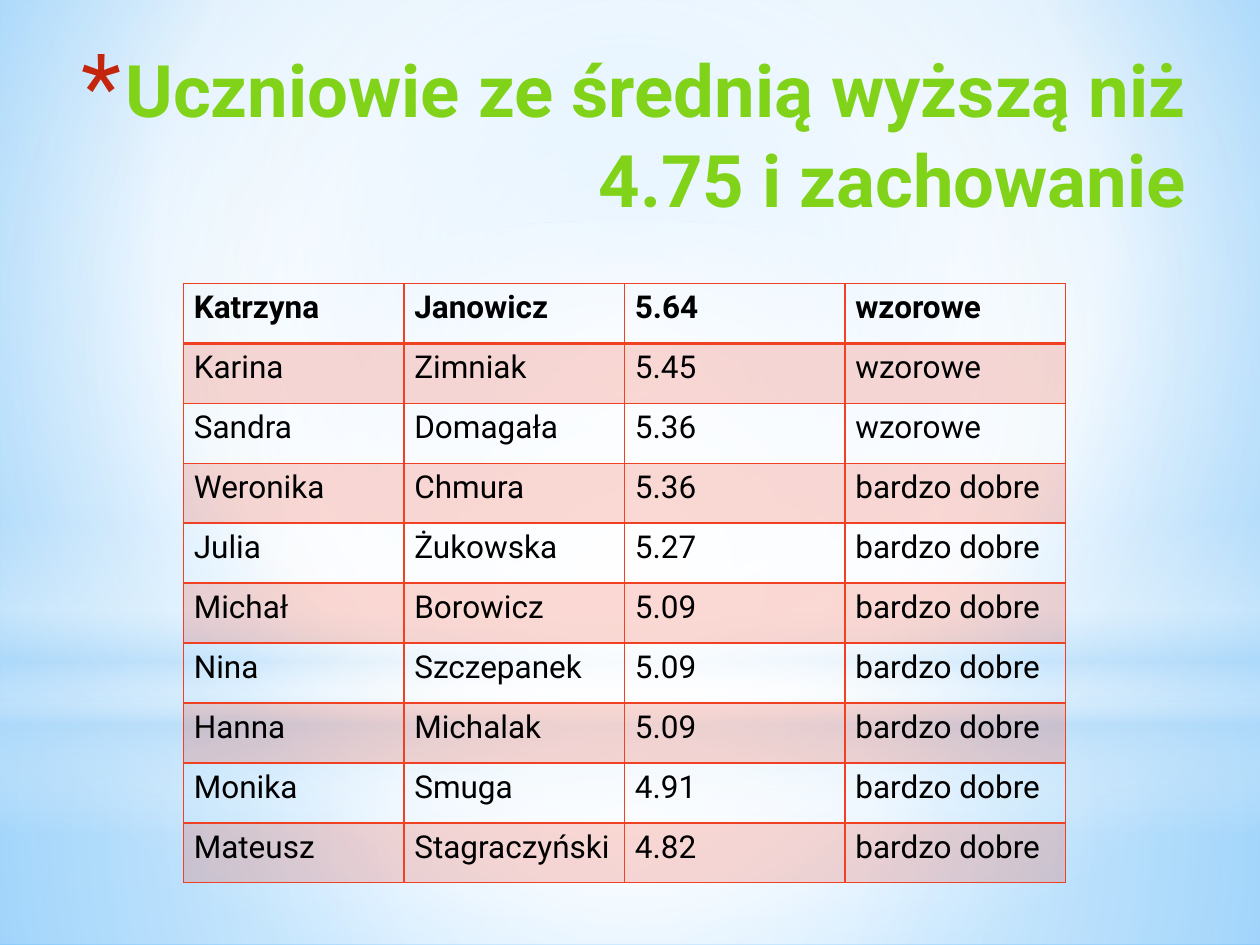
from lxml.etree import SubElement
from pptx import Presentation
from pptx.dml.color import RGBColor
from pptx.enum.shapes import MSO_SHAPE
from pptx.enum.text import PP_ALIGN
from pptx.oxml.ns import qn
from pptx.util import Pt


def hue(code):
    return RGBColor.from_string(code)


def blend(fill, root, stops, focus=None):
    """Fill with (position, colour, opacity) stops; radial if focus is given."""
    fill.gradient()
    grad = root.find(".//" + qn("a:gradFill"))
    for old in list(grad):
        grad.remove(old)
    grad.set("rotWithShape", "1")
    group = SubElement(grad, qn("a:gsLst"))
    for pos, code, alpha in stops:
        stop = SubElement(group, qn("a:gs"), pos=str(pos * 1000))
        tone = SubElement(stop, qn("a:srgbClr"), val=str(hue(code)))
        if alpha < 100:
            SubElement(tone, qn("a:alpha"), val=str(alpha * 1000))
    if focus:
        ring = SubElement(grad, qn("a:path"), path="circle")
        sides = {side: str(part * 1000) for side, part in zip("ltrb", focus)}
        SubElement(ring, qn("a:fillToRect"), **sides)
    else:
        SubElement(grad, qn("a:lin"), ang="5400000", scaled="0")


deck = Presentation()
deck.slide_width, deck.slide_height = Pt(720), Pt(540)
slide = deck.slides.add_slide(deck.slide_layouts[6])

# Background
blend(slide.background.fill, slide.element,
      [(0, "9ED5FF", 100), (60, "FFFFFF", 100), (100, "5BB9FF", 100)],
      (20, 10, 20, 60))

# Soft light layers: shape, top, height, stops, focus
mid = (50, 50, 50, 50)
layers = [
    (MSO_SHAPE.RECTANGLE, 402, 138,
     [(0, "FFFFFF", 91), (37, "FFFFFF", 76), (100, "B4DCFA", 79)], mid),
    (MSO_SHAPE.RECTANGLE, 0, 402,
     [(0, "FFFFFF", 89), (48, "FFFFFF", 62), (100, "B4DCFA", 79)], mid),
    (MSO_SHAPE.RECTANGLE, 296.6, 180,
     [(0, "FFFFFF", 0), (29, "FFFFFF", 30), (45, "B4DCFA", 40),
      (55, "FFFFFF", 26), (65, "B4DCFA", 60), (100, "FFFFFF", 0)], None),
    (MSO_SHAPE.OVAL, 126, 402, [(0, "FFFFFF", 100), (56, "FFFFFF", 0)], mid),
]
for kind, top, height, stops, focus in layers:
    glow = slide.shapes.add_shape(kind, 0, Pt(top), Pt(720), Pt(height))
    glow.shadow.inherit = False
    glow.line.fill.background()
    blend(glow.fill, glow.element, stops, focus)

# Title with a red asterisk bullet
title = slide.shapes.add_textbox(Pt(36.7), Pt(20.9), Pt(648), Pt(90))
title.text_frame.word_wrap = True
para = title.text_frame.paragraphs[0]
para.alignment = PP_ALIGN.RIGHT
para.line_spacing = 1.03
run = para.add_run()
run.text = "Uczniowie ze średnią wyższą niż 4.75 i zachowanie"
for name, value in {"name": "Roboto", "size": Pt(41.4), "bold": True}.items():
    setattr(run.font, name, value)
run.font.color.rgb = hue("81D31A")
props = para._p.get_or_add_pPr()
props.set("marL", str(Pt(25.2)))
props.set("indent", str(Pt(-25.2)))
tint = SubElement(props, qn("a:buClr"))
SubElement(tint, qn("a:srgbClr"), val="C3260C")
SubElement(props, qn("a:buSzPct"), val="128000")
SubElement(props, qn("a:buFont"), typeface="Roboto")
SubElement(props, qn("a:buChar"), char="*")

# Table of pupils: first name, surname, average, conduct
good, best = "bardzo dobre", "wzorowe"
pupils = [
    ("Katrzyna", "Janowicz", "5.64", best),
    ("Karina", "Zimniak", "5.45", best),
    ("Sandra", "Domagała", "5.36", best),
    ("Weronika", "Chmura", "5.36", good),
    ("Julia", "Żukowska", "5.27", good),
    ("Michał", "Borowicz", "5.09", good),
    ("Nina", "Szczepanek", "5.09", good),
    ("Hanna", "Michalak", "5.09", good),
    ("Monika", "Smuga", "4.91", good),
    ("Mateusz", "Stagraczyński", "4.82", good),
]
red = "F14124"
table = slide.shapes.add_table(len(pupils), 4, Pt(105), Pt(162),
                               Pt(504), Pt(342.7)).table
table.horz_banding = False
for row, pupil in enumerate(pupils):
    for col, text in enumerate(pupil):
        cell = table.cell(row, col)
        look = {"margin_left": 5.8, "margin_right": 5.8,
                "margin_top": 3.6, "margin_bottom": 3.6}
        for name, value in look.items():
            setattr(cell, name, Pt(value))
        run = cell.text_frame.paragraphs[0].add_run()
        run.text = text
        font = {"name": "Roboto", "size": Pt(18), "bold": row == 0}
        for name, value in font.items():
            setattr(run.font, name, value)
        run.font.color.rgb = hue("000000")

        # Pale red on every other row
        props = cell._tc.get_or_add_tcPr()
        if row % 2:
            cell.fill.solid()
            cell.fill.fore_color.rgb = hue(red)
            SubElement(props.find(".//" + qn("a:srgbClr")), qn("a:alpha"), val="20000")
        else:
            cell.fill.background()

        # Borders, thicker under the first row
        wide = {"L": 1, "R": 1, "T": 2 if row == 1 else 1, "B": 2 if row == 0 else 1}
        for spot, (side, width) in enumerate(wide.items()):
            edge = SubElement(props, qn("a:ln" + side), w=str(Pt(width)))
            ink = SubElement(edge, qn("a:solidFill"))
            SubElement(ink, qn("a:srgbClr"), val=red)
            props.insert(spot, edge)

deck.save("out.pptx")
